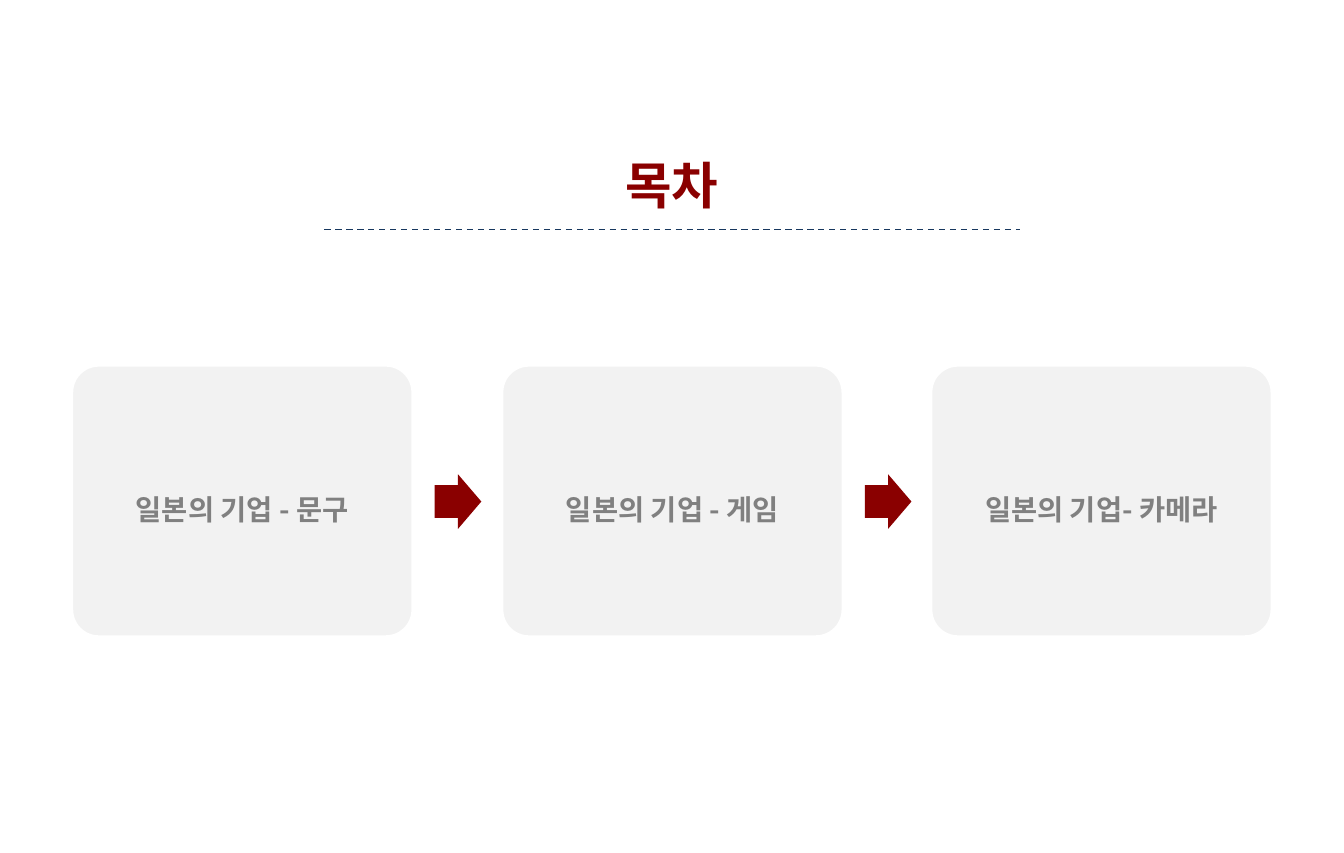
from lxml import etree
from pptx import Presentation
from pptx import util as u
from pptx.dml.color import RGBColor
from pptx.enum import dml, shapes, text
from pptx.oxml import ns

PX = 9144  # EMU per px, 100 px to the inch
FONT = "Noto Sans CJK KR"
RED = RGBColor(0x8A, 0x00, 0x00)
NAVY = RGBColor(0x17, 0x37, 0x5E)
GRAY = RGBColor(0x80, 0x80, 0x80)
PALE = RGBColor(0xF2, 0xF2, 0xF2)
WHITE = RGBColor(0xFF, 0xFF, 0xFF)


def px(*lengths):
    return [u.Emu(n * PX) for n in lengths]


def write(shape, words, size, color):
    tf = shape.text_frame
    tf.text = words
    tf.word_wrap = True
    tf.vertical_anchor = text.MSO_ANCHOR.MIDDLE
    p = tf.paragraphs[0]
    p.alignment = text.PP_ALIGN.CENTER
    r = p.runs[0]
    r.font.name, r.font.size, r.font.bold = FONT, u.Pt(size), True
    r.font.color.rgb = color
    # Korean glyphs take the East Asian typeface
    ea = etree.SubElement(r.font._element, ns.qn("a:ea"))
    ea.set("typeface", FONT)
    return tf


prs = Presentation()
prs.slide_width = u.Cm(30)
prs.slide_height = u.Inches(7.5)
s = prs.slides.add_slide(prs.slide_layouts[5])

# Title
title = s.shapes.title
title.left, title.top, title.width, title.height = px(47, 131, 1087, 63)
write(title, "목차", 32, RED)

# Dashed rule under the title
rule = s.shapes.add_connector(shapes.MSO_CONNECTOR.STRAIGHT, *px(285, 202, 896, 202))
rule.line.color.rgb = NAVY
rule.line.width = u.Pt(1)
rule.line.dash_style = dml.MSO_LINE.DASH
etree.SubElement(rule._element.spPr, ns.qn("a:effectLst"))

# Topic cards, with an arrow from each to the next
topics = ["일본의 기업 - 문구", "일본의 기업 - 게임", "일본의 기업- 카메라"]
for i, topic in enumerate(topics):
    left = 63 + (i * 755 + 1) // 2
    card = s.shapes.add_shape(shapes.MSO_SHAPE.ROUNDED_RECTANGLE, *px(left, 321, 300, 239))
    card.adjustments[0] = 0.1
    card.shadow.inherit = False
    card.fill.solid()
    card.fill.fore_color.rgb = PALE
    card.line.color.rgb = WHITE
    card.line.width = u.Pt(2)
    tf = write(card, topic, 18, GRAY)
    tf.margin_left, tf.margin_top, tf.margin_right, tf.margin_bottom = px(7, 7, 7, 7)
    tf.paragraphs[0].line_spacing = 1.5

    if i < len(topics) - 1:
        arrow = s.shapes.add_shape(shapes.MSO_SHAPE.RIGHT_ARROW, *px(left + 319, 417, 41, 48))
        arrow.adjustments[0] = 0.6
        arrow.adjustments[1] = 0.5
        arrow.shadow.inherit = False
        arrow.fill.solid()
        arrow.fill.fore_color.rgb = RED
        arrow.line.fill.background()

prs.save("out.pptx")
